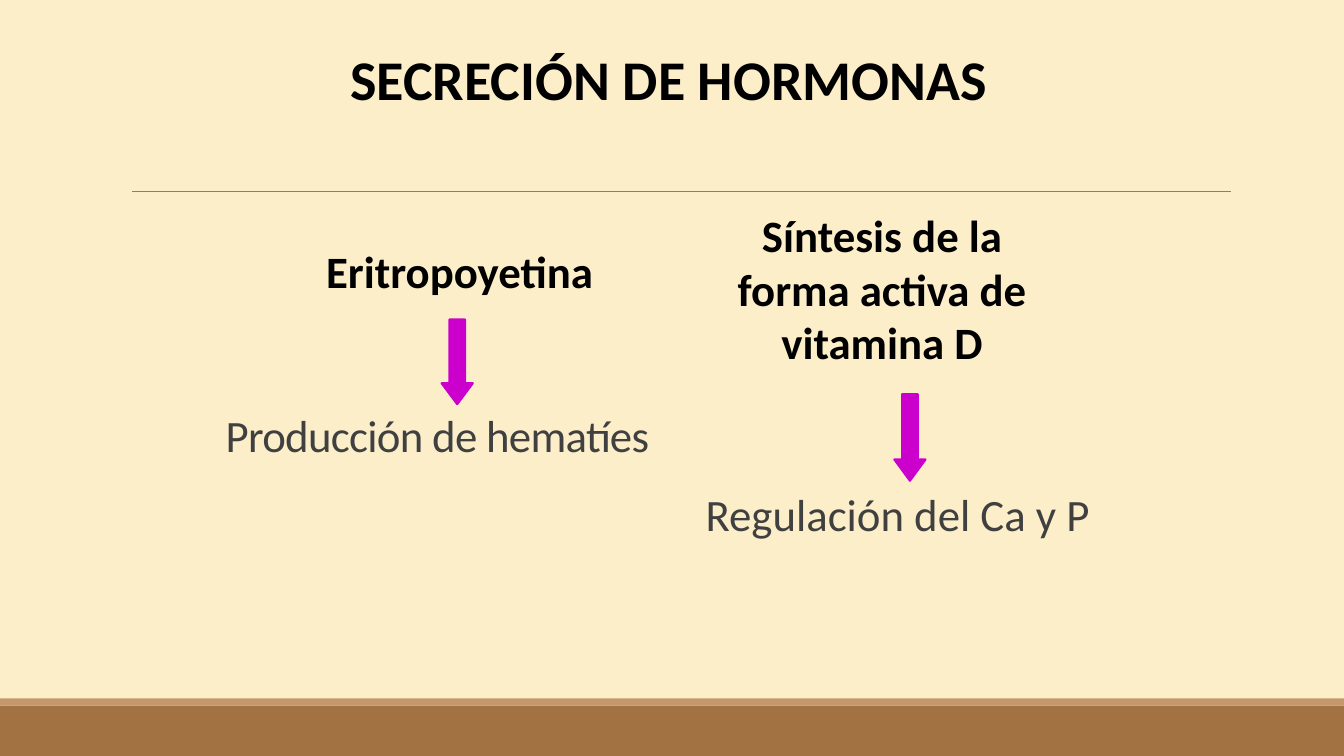
from pptx import Presentation
from pptx.dml.color import RGBColor
from pptx.enum import shapes, text
from pptx.util import Inches, Pt

BLACK, GREY, MAGENTA = "000000", "404040", "CC00CC"
MIDDLE, TOP = text.MSO_ANCHOR.MIDDLE, text.MSO_ANCHOR.TOP
CENTER, LEFT = text.PP_ALIGN.CENTER, text.PP_ALIGN.LEFT


def color(value):
    return RGBColor.from_string(value)


def place(sp, box):
    for name, value in zip(("left", "top", "width", "height"), box):
        setattr(sp, name, Inches(value))


def write(sp, lines, fill, anchor=MIDDLE, align=CENTER, wrap=True,
          spacing=1.0, track=0, **font):
    tf = sp.text_frame
    frame = {"word_wrap": wrap, "auto_size": text.MSO_AUTO_SIZE.NONE,
             "vertical_anchor": anchor}
    for name, value in frame.items():
        setattr(tf, name, value)
    style = {"name": "Calibri", "size": Pt(32), "bold": False, **font}
    for i, line in enumerate(lines):
        p = tf.add_paragraph() if i else tf.paragraphs[0]
        p.alignment, p.line_spacing = align, spacing
        r = p.add_run()
        r.text = line
        for name, value in style.items():
            setattr(r.font, name, value)
        r.font.color.rgb = color(fill)
        if track:
            r.font._element.set("spc", str(track))


def add_text(slide, box, lines, fill, **options):
    sp = slide.shapes.add_textbox(*map(Inches, box))
    write(sp, lines, fill, **options)


def add_block(slide, kind, box, fill, border=None):
    sp = slide.shapes.add_shape(kind, *map(Inches, box))
    sp.shadow.inherit = False
    sp.fill.solid()
    sp.fill.fore_color.rgb = color(fill)
    if border:
        sp.line.color.rgb = color(fill)
        sp.line.width = Pt(border)
    else:
        sp.line.fill.background()
    return sp


def add_arrow(slide, box, head):
    sp = add_block(slide, shapes.MSO_SHAPE.DOWN_ARROW, box, MAGENTA, 1.5)
    sp.adjustments[0], sp.adjustments[1] = 0.5, head


def add_rule(slide, x1, x2, y):
    line = slide.shapes.add_connector(
        shapes.MSO_CONNECTOR.STRAIGHT, *map(Inches, (x1, y, x2, y)))
    line.line.color.rgb = color("808080")
    line.line.width = Pt(0.5)
    sp_pr = line._element.spPr
    sp_pr.append(sp_pr.makeelement(
        "{http://schemas.openxmlformats.org/drawingml/2006/main}effectLst", {}))


def main():
    prs = Presentation()
    prs.slide_width, prs.slide_height = Inches(13.33), Inches(7.5)
    slide = prs.slides.add_slide(prs.slide_layouts[5])

    # Background, footer bands and rule
    slide.background.fill.solid()
    slide.background.fill.fore_color.rgb = color("FBEEC9")
    for top, height, fill in ((7, 0.5, "A27242"), (6.93, 0.07, "C3986D")):
        add_block(slide, shapes.MSO_SHAPE.RECTANGLE,
                  (0, top, 13.33, height), fill)
    add_rule(slide, 1.31, 12.21, 1.9)

    # Title
    title = slide.shapes.title
    place(title, (2.1, 0.4, 9.06, 0.75))
    write(title, ["SECRECIÓN DE HORMONAS"], BLACK, size=Pt(40), bold=True)

    # Hormones
    add_text(slide, (3.09, 2.02, 2.94, 1.32), ["Eritropoyetina"], BLACK,
             wrap=False, bold=True)
    add_text(slide, (6.82, 2.2, 3.86, 1.32),
             ["Síntesis de la", "forma activa de", "vitamina D"], BLACK,
             wrap=False, bold=True)

    # Effects
    add_text(slide, (2.14, 4.04, 4.84, 0.63), ["Producción de hematíes"], GREY,
             align=LEFT, spacing=0.85, track=-50)
    add_text(slide, (6.9, 4.84, 4.38, 0.79), ["Regulación del Ca y P"], GREY,
             anchor=TOP, align=LEFT, spacing=0.9)

    # Arrows from hormone to effect
    add_arrow(slide, (4.38, 3.17, 0.31, 0.84), 0.67)
    add_arrow(slide, (8.87, 3.91, 0.31, 0.86), 0.68)

    prs.save("out.pptx")


if __name__ == "__main__":
    main()
